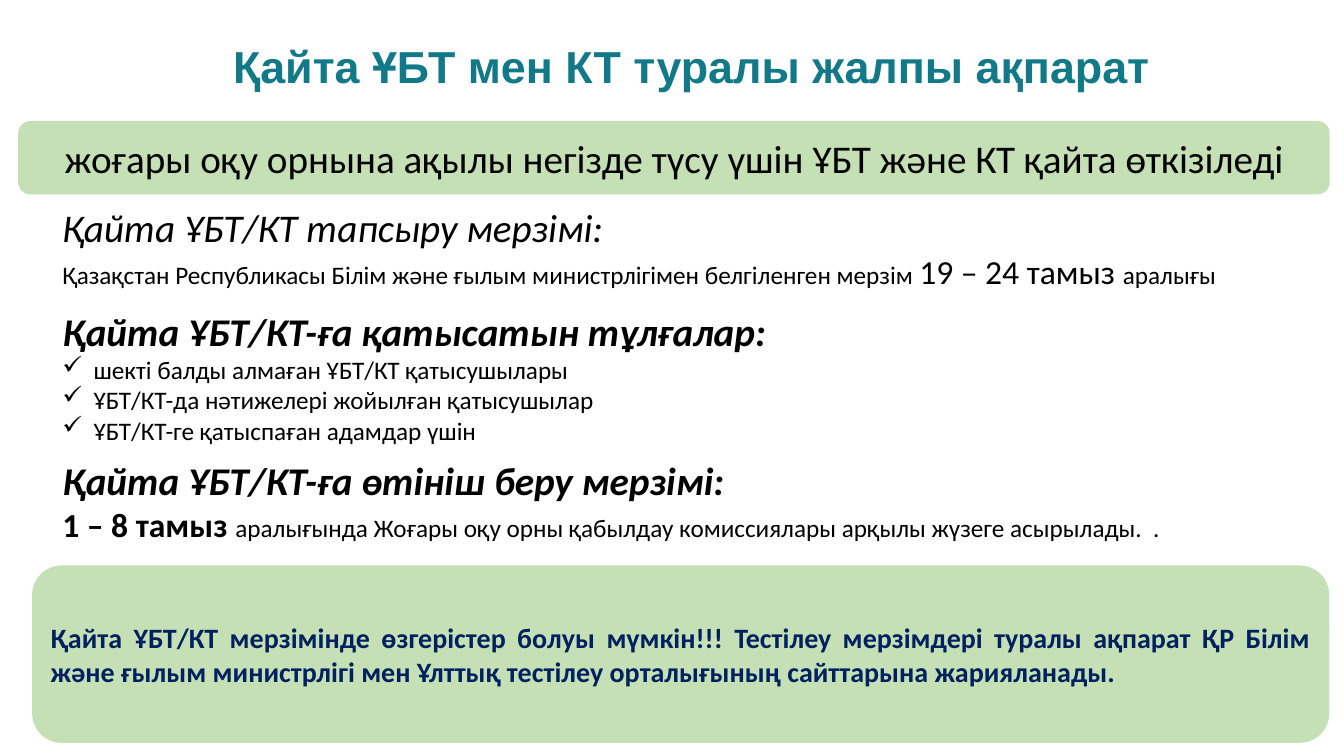
from dataclasses import dataclass

from lxml import etree
from pptx import Presentation
from pptx.dml.color import RGBColor
from pptx.enum.shapes import MSO_SHAPE
from pptx.enum.text import MSO_ANCHOR, PP_ALIGN
from pptx.oxml.ns import qn
from pptx.util import Cm, Pt

ROUNDED, RECTANGLE = MSO_SHAPE.ROUNDED_RECTANGLE, MSO_SHAPE.RECTANGLE
TOP, MIDDLE = MSO_ANCHOR.TOP, MSO_ANCHOR.MIDDLE
LEFT, CENTER, JUSTIFY = PP_ALIGN.LEFT, PP_ALIGN.CENTER, PP_ALIGN.JUSTIFY


@dataclass(frozen=True)
class Theme:
    teal: RGBColor = RGBColor(0x12, 0x79, 0x89)
    green: RGBColor = RGBColor(0xC5, 0xE0, 0xB4)
    navy: RGBColor = RGBColor(0x00, 0x20, 0x60)
    black: RGBColor = RGBColor(0, 0, 0)
    white: RGBColor = RGBColor(255, 255, 255)
    title: int = 32
    heading: int = 28
    date: int = 24
    notice: int = 20
    body: int = 18


theme = Theme()


def write(paragraph, text, size, bold=False, italic=False, color=theme.black, font="Calibri"):
    run = paragraph.add_run()
    run.text = text
    run.font.name = font
    run.font.size = Pt(size)
    run.font.bold = bold
    run.font.italic = italic
    run.font.color.rgb = color


def add_panel(kind, left, top, width, height, align, anchor):
    panel = slide.shapes.add_shape(kind, Cm(left), Cm(top), Cm(width), Cm(height))
    panel.shadow.inherit = False
    panel.fill.solid()
    panel.fill.fore_color.rgb = theme.green
    panel.line.fill.background()
    panel.text_frame.word_wrap = True
    panel.text_frame.vertical_anchor = anchor
    panel.text_frame.paragraphs[0].alignment = align
    return panel


prs = Presentation()
prs.slide_width, prs.slide_height = Cm(33.87), Cm(19.05)
slide = prs.slides.add_slide(prs.slide_layouts[6])

title = slide.shapes.add_textbox(Cm(2.74), Cm(0.86), Cm(29.39), Cm(1.63)).text_frame
title.word_wrap = True
title.paragraphs[0].alignment = CENTER
write(title.paragraphs[0], "Қайта ҰБТ мен КТ туралы жалпы ақпарат", theme.title,
      bold=True, color=theme.teal, font="Arial")

exam_dates = add_panel(RECTANGLE, 1.32, 5, 30.84, 2.49, LEFT, TOP)
exam_dates.fill.background()
exam_dates.line.color.rgb = theme.white
exam_dates.line.width = Pt(0.75)
write(exam_dates.text_frame.paragraphs[0], "Қайта ҰБТ/КТ тапсыру мерзімі:", theme.heading, italic=True)
exam_period = exam_dates.text_frame.add_paragraph()
exam_period.alignment = LEFT
write(exam_period, "Қазақстан Республикасы Білім және ғылым министрлігімен белгіленген мерзім ", theme.body)
write(exam_period, "19 – 24 тамыз ", theme.date)
write(exam_period, "аралығы", theme.body)

participants = slide.shapes.add_textbox(Cm(1.32), Cm(7.62), Cm(29.57), Cm(3.76)).text_frame
participants.word_wrap = True
write(participants.paragraphs[0], "Қайта ҰБТ/КТ-ға қатысатын тұлғалар:", theme.heading, bold=True, italic=True)
for group in (
    "шекті балды алмаған ҰБТ/КТ қатысушылары",
    "ҰБТ/КТ-да нәтижелері жойылған қатысушылар",
    "ҰБТ/КТ-ге қатыспаған адамдар үшін",
):
    item = participants.add_paragraph()
    write(item, group, theme.body)
    properties = item._p.get_or_add_pPr()
    properties.set("marL", str(Cm(0.79)))
    properties.set("indent", str(-Cm(0.79)))
    etree.SubElement(properties, qn("a:buChar")).set("char", "✓")

application = slide.shapes.add_textbox(Cm(1.32), Cm(11.38), Cm(29.57), Cm(3.25)).text_frame
application.word_wrap = True
write(application.paragraphs[0], "Қайта ҰБТ/КТ-ға өтініш беру мерзімі:", theme.heading, bold=True, italic=True)
application_period = application.add_paragraph()
write(application_period, "1 – 8 тамыз ", theme.date, bold=True)
write(application_period,
      "аралығында Жоғары оқу орны қабылдау комиссиялары арқылы жүзеге асырылады.  .", theme.body)

banner = add_panel(ROUNDED, 0.46, 3.05, 33.05, 1.85, CENTER, MIDDLE)
write(banner.text_frame.paragraphs[0],
      "жоғары оқу орнына ақылы негізде түсу үшін ҰБТ және КТ қайта өткізіледі", theme.heading)

notice = add_panel(ROUNDED, 0.81, 14.25, 32.69, 4.47, JUSTIFY, MIDDLE)
write(notice.text_frame.paragraphs[0],
      "Қайта ҰБТ/КТ мерзімінде өзгерістер болуы мүмкін!!! Тестілеу мерзімдері туралы ақпарат "
      "ҚР Білім және ғылым министрлігі мен Ұлттық тестілеу орталығының сайттарына жарияланады.",
      theme.notice, bold=True, color=theme.navy)

prs.save("out.pptx")
